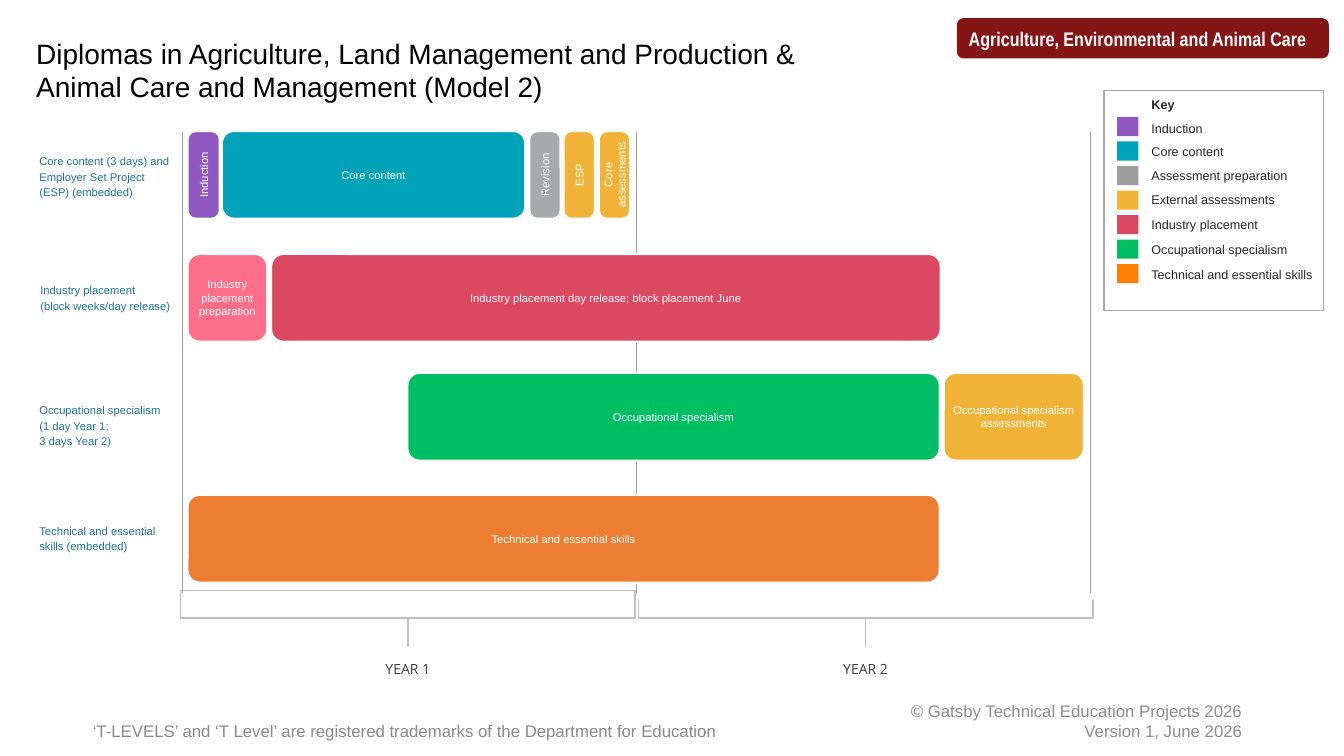
import pptx
import pptx.util
import pptx.dml.color
import pptx.enum.shapes
import pptx.enum.text
import pptx.oxml.ns
import lxml.etree

Inches = pptx.util.Inches
Pt = pptx.util.Pt
SHAPES = pptx.enum.shapes.MSO_SHAPE
ALIGN = pptx.enum.text.PP_ALIGN
ANCHOR = pptx.enum.text.MSO_ANCHOR

WHITE = "FFFFFF"
BRACKET_GREY = "BFBFBF"
TIMELINE_GREY = "9E9E9D"
LABEL_BLUE = "1A768D"
PURPLE = "9059C2"
TEAL = "00A3B7"
AMBER = "F0B337"
CRIMSON = "DB4862"
GREEN = "00BF63"

DEFAULT_MARGINS = (0.1, 0.05, 0.1, 0.05)
NO_MARGINS = (0, 0, 0, 0)
NARROW_MARGINS = (0.04, 0.05, 0.04, 0.05)

BAR_HEIGHT = 0.87
YEAR_WIDTH = 4.51

# Row label, label left, label top, label width, bar top, bars.
# Bar: text, left, width, colour, upright text, margins.
ROWS = [
    ("Core content (3 days) and Employer Set Project (ESP) (embedded)", 0.39, 1.51, 1.3, 1.3, [
        ("Induction", 1.86, 0.32, PURPLE, True, DEFAULT_MARGINS),
        ("Core content", 2.2, 3.01, TEAL, False, DEFAULT_MARGINS),
        ("Revision", 5.25, 0.31, "A7A9AC", True, DEFAULT_MARGINS),
        ("ESP", 5.59, 0.31, AMBER, True, NARROW_MARGINS),
        ("Core assessments", 5.94, 0.31, AMBER, True, NARROW_MARGINS),
    ]),
    ("Industry placement\n(block weeks/day release)", 0.4, 2.79, 1.36, 2.52, [
        ("Industry placement preparation", 1.86, 0.79, "FD6F88", False, (0, 0.05, 0, 0.05)),
        ("Industry placement day release; block placement June", 2.69, 6.64, CRIMSON, False,
         DEFAULT_MARGINS),
    ]),
    ("Occupational specialism\n(1 day Year 1;\v3 days Year 2)", 0.39, 3.98, 1.3, 3.7, [
        ("Occupational specialism", 4.04, 5.28, GREEN, False, DEFAULT_MARGINS),
        ("Occupational specialism assessments", 9.36, 1.39, AMBER, False, NARROW_MARGINS),
    ]),
    ("Technical and essential skills (embedded)", 0.39, 5.18, 1.3, 4.91, [
        ("Technical and essential skills", 1.86, 7.46, "ED7D31", False, DEFAULT_MARGINS),
    ]),
]

KEY_ENTRIES = [
    ("Induction", PURPLE),
    ("Core content", TEAL),
    ("Assessment preparation", TIMELINE_GREY),
    ("External assessments", AMBER),
    ("Industry placement", CRIMSON),
    ("Occupational specialism", GREEN),
    ("Technical and essential skills", "FF7F00"),
]


def rgb(value):
    return pptx.dml.color.RGBColor.from_string(value)


def write_text(shape, text, size, color, font="Arial", bold=False, align=ALIGN.LEFT,
               anchor=ANCHOR.TOP, margins=DEFAULT_MARGINS, line_spacing=None):
    frame = shape.text_frame
    frame.word_wrap = True
    frame.vertical_anchor = anchor
    frame.margin_left, frame.margin_top, frame.margin_right, frame.margin_bottom = map(
        Inches, margins)
    frame.text = text
    for paragraph in frame.paragraphs:
        paragraph.alignment = align
        paragraph.line_spacing = line_spacing
        for run in paragraph.runs:
            run.font.size = Pt(size)
            run.font.name = font
            run.font.bold = bold
            run.font.color.rgb = rgb(color)


def add_text(slide, box, text, size, color, **options):
    shape = slide.shapes.add_textbox(*map(Inches, box))
    write_text(shape, text, size, color, **options)


def add_box(slide, box, fill=None, line=None, line_width=1, kind=SHAPES.RECTANGLE):
    shape = slide.shapes.add_shape(kind, *map(Inches, box))
    shape.shadow.inherit = False
    if fill:
        shape.fill.solid()
        shape.fill.fore_color.rgb = rgb(fill)
    else:
        shape.fill.background()
    if line:
        shape.line.color.rgb = rgb(line)
        shape.line.width = Pt(line_width)
    else:
        shape.line.fill.background()
    return shape


def add_vertical_line(slide, x, top, bottom, color, width):
    connector = slide.shapes.add_connector(
        pptx.enum.shapes.MSO_CONNECTOR.STRAIGHT,
        Inches(x), Inches(top), Inches(x), Inches(bottom))
    connector.line.color.rgb = rgb(color)
    connector.line.width = Pt(width)
    properties = connector._element.spPr
    lxml.etree.SubElement(properties, pptx.oxml.ns.qn("a:effectLst"))


def add_bar(slide, text, left, top, width, fill, upright, margins):
    """Add a bar filling its row; an upright one is a turned shape, so its text runs upwards."""
    if upright:
        box = (left + (width - BAR_HEIGHT) / 2, top + (BAR_HEIGHT - width) / 2,
               BAR_HEIGHT, width)
    else:
        box = (left, top, width, BAR_HEIGHT)
    bar = add_box(slide, box, fill, WHITE, 1.5, SHAPES.ROUNDED_RECTANGLE)
    bar.rotation = 270 if upright else 0
    radius = 0.08 if upright else 0.12
    bar.adjustments[0] = radius / min(width, BAR_HEIGHT)
    write_text(bar, text, 8, WHITE, align=ALIGN.CENTER, anchor=ANCHOR.MIDDLE, margins=margins)


def add_years(slide):
    year_starts = {"YEAR 1": 1.79, "YEAR 2": 6.33}
    for left in year_starts.values():
        add_box(slide, (left, 5.86, YEAR_WIDTH, 0.27), line=BRACKET_GREY)
    # Opens the top of the second bracket
    add_box(slide, (6.31, 5.78, 4.57, 0.17), WHITE)
    for name, left in year_starts.items():
        middle = left + YEAR_WIDTH / 2
        add_vertical_line(slide, middle, 6.12, 6.42, BRACKET_GREY, 1)
        add_text(slide, (middle - 0.33, 6.55, 0.66, 0.14), name, 10, "3C3C3B",
                 font="Open Sans", align=ALIGN.CENTER, margins=NO_MARGINS, line_spacing=1.02)
    for x in (1.81, 6.31, 10.82):
        add_vertical_line(slide, x, 1.31, 5.88, TIMELINE_GREY, 0.75)


def add_key(slide):
    frame_box = add_box(slide, (10.95, 0.9, 2.18, 2.18), line="A6A6A6")
    lines = ["Key"] + [name for name, color in KEY_ENTRIES]
    write_text(frame_box, "\n".join(lines), 9, "262626", margins=(0.47, 0.05, 0.05, 0.05),
               line_spacing=1.08)
    heading, *entries = frame_box.text_frame.paragraphs
    heading.runs[0].font.bold = True
    for paragraph in entries:
        paragraph.space_before = Pt(6)
    for paragraph in entries[:3]:
        paragraph.line_spacing = 1.0
    swatch_step = (2.62 - 1.16) / (len(KEY_ENTRIES) - 1)
    for index, (name, color) in enumerate(KEY_ENTRIES):
        add_box(slide, (11.08, 1.16 + index * swatch_step, 0.21, 0.19), color)


def main():
    presentation = pptx.Presentation()
    presentation.slide_width = Inches(13.33)
    presentation.slide_height = Inches(7.5)
    slide = presentation.slides.add_slide(presentation.slide_layouts[6])

    add_years(slide)
    badge = add_box(slide, (9.49, 0.18, 3.69, 0.4), "851414", kind=SHAPES.ROUNDED_RECTANGLE)
    write_text(badge, "Agriculture, Environmental and Animal Care", 14, WHITE,
               font="Arial Narrow", bold=True, anchor=ANCHOR.MIDDLE)
    add_text(slide, (8.83, 6.95, 3.59, 0.4),
             "© Gatsby Technical Education Projects 2026\nVersion 1, June 2026",
             12, "8C8C8C", align=ALIGN.RIGHT, anchor=ANCHOR.MIDDLE)
    add_text(slide, (0.92, 7.15, 6.81, 0.2),
             "‘T-LEVELS’ and ‘T Level’ are registered trademarks of the Department for Education",
             12, "898989", margins=NO_MARGINS)
    add_text(slide, (0.26, 0.31, 8.89, 0.77),
             "Diplomas in Agriculture, Land Management and Production &\v"
             "Animal Care and Management (Model 2)", 20, "000000")

    for label, label_left, label_top, label_width, bar_top, bars in ROWS:
        add_text(slide, (label_left, label_top, label_width, 0.47), label, 8, LABEL_BLUE,
                 margins=NO_MARGINS, line_spacing=1.16)
        for text, left, width, fill, upright, margins in bars:
            add_bar(slide, text, left, bar_top, width, fill, upright, margins)
    add_key(slide)

    presentation.save("out.pptx")


if __name__ == "__main__":
    main()
